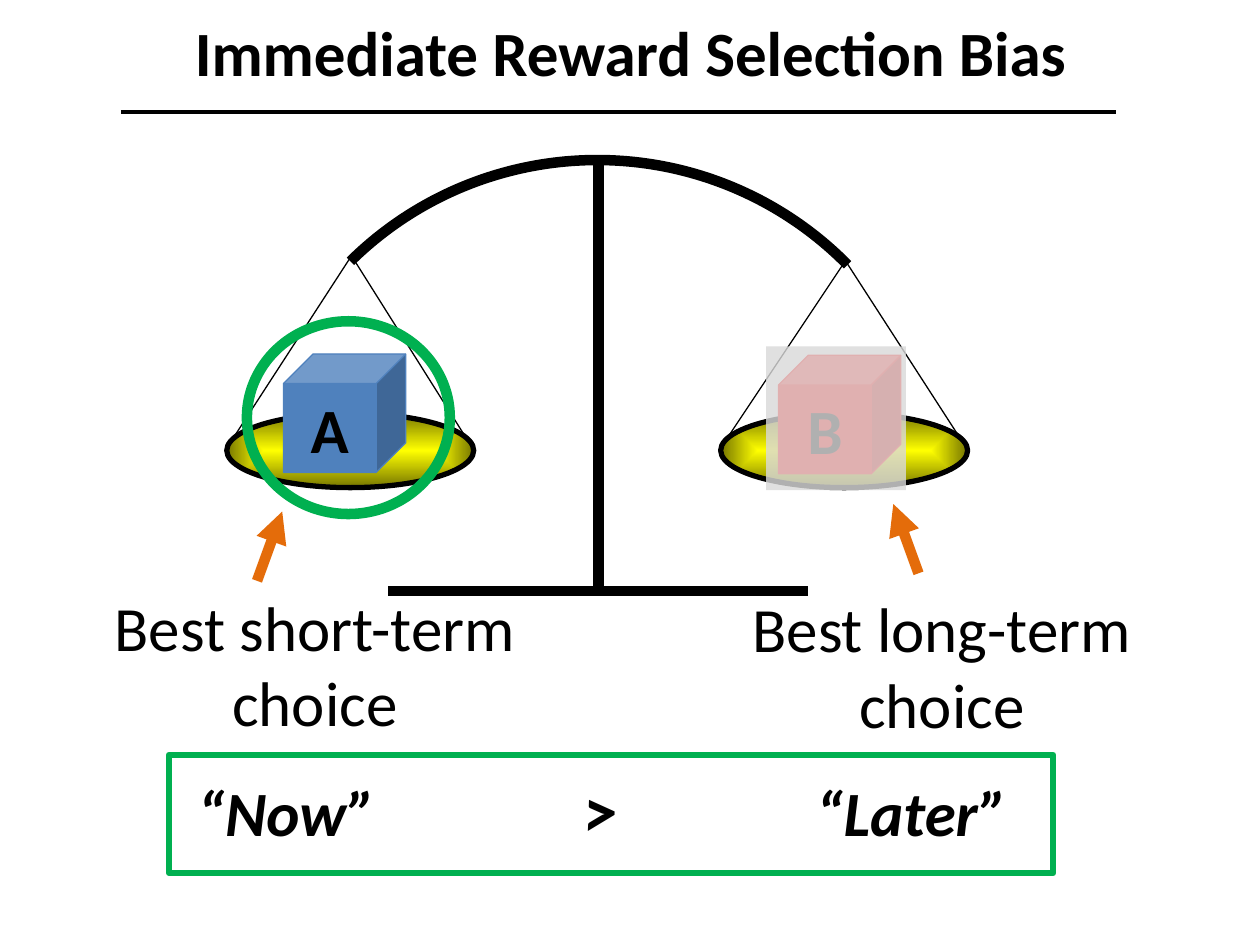
from dataclasses import dataclass

from lxml import etree
from pptx import Presentation
from pptx import util as u
from pptx.dml.color import RGBColor
from pptx.enum import shapes, text
from pptx.oxml import ns

COLUMNS, ROWS = 100, 75
CELL = u.Inches(10) // COLUMNS


@dataclass(frozen=True)
class Theme:
    font: str = "Calibri"
    ink: str = "000000"
    blue: str = "4F81BD"
    red: str = "FF0000"
    green: str = "00B050"
    orange: str = "E46C0A"
    veil: str = "D9D9D9"
    pan_inner: str = "FFFF00"
    pan_outer: str = "767600"
    size: int = 36
    sign_size: int = 40
    heavy: float = 6


THEME = Theme()


def grid(*cells):
    return [round(cell * CELL) for cell in cells]


def add_xml(parent, tag, **attributes):
    return etree.SubElement(parent, ns.qn(tag), **attributes)


def set_line(line, color, width):
    line.color.rgb = RGBColor.from_string(color)
    line.width = u.Pt(width)


def add_line(parts, start, end, width, color=THEME.ink, arrow=False):
    line = parts.add_connector(
        shapes.MSO_CONNECTOR.STRAIGHT, *grid(*start), *grid(*end))
    set_line(line.line, color, width)
    if arrow:
        add_xml(line.line._get_or_add_ln(), "a:tailEnd", type="triangle")
    add_xml(line._element.spPr, "a:effectLst")


def add_figure(parts, kind, place, fill=None, line=None, width=0.75):
    figure = parts.add_shape(kind, *grid(*place))
    figure.shadow.inherit = False
    if fill:
        figure.fill.solid()
        figure.fill.fore_color.rgb = RGBColor.from_string(fill)
    else:
        figure.fill.background()
    if line:
        set_line(figure.line, line, width)
    else:
        figure.line.fill.background()
    return figure


def write(frame, lines, size=THEME.size, bold=False, italic=False,
          align=text.PP_ALIGN.CENTER):
    for index, words in enumerate(lines):
        para = frame.paragraphs[0] if index == 0 else frame.add_paragraph()
        para.text = words
        para.alignment = align
        font = para.font
        font.name, font.size = THEME.font, u.Pt(size)
        font.bold, font.italic = bold, italic
        font.color.rgb = RGBColor.from_string(THEME.ink)


def add_label(page, place, lines, wrap=True, **style):
    box = page.shapes.add_textbox(*grid(*place))
    box.text_frame.word_wrap = wrap
    write(box.text_frame, lines, **style)
    return box


def add_title(page, words):
    title = page.shapes.title
    title.left, title.top, title.width, title.height = grid(3.1, 0, 93.9, 8.2)
    title.text_frame.auto_size = text.MSO_AUTO_SIZE.NONE
    title.text_frame.vertical_anchor = text.MSO_ANCHOR.MIDDLE
    write(title.text_frame, [words], bold=True)
    add_line(page.shapes, (9.6, 8.9), (88.6, 8.9), 2.25)


def add_pan(parts, left, hook):
    pan = add_figure(parts, shapes.MSO_SHAPE.OVAL, (left, 32.8, 19.6, 5.9),
                     line=THEME.ink, width=3)
    pan.fill.gradient()
    for stop, color in zip(pan.fill.gradient_stops,
                           (THEME.pan_inner, THEME.pan_outer)):
        stop.color.rgb = RGBColor.from_string(color)
    gradient = pan._element.spPr.find(ns.qn("a:gradFill"))
    gradient.remove(gradient.find(ns.qn("a:lin")))
    center = add_xml(gradient, "a:path", path="shape")
    add_xml(center, "a:fillToRect", l="50000", t="50000", r="50000", b="50000")
    for edge in (left + 0.1, left + 19.4):
        add_line(parts, (edge, 35.4), hook, 0.75)


def add_scale(page):
    parts = page.shapes.add_group_shape().shapes
    add_line(parts, (47.5, 12.4), (47.5, 46.9), THEME.heavy)
    add_line(parts, (30.8, 46.9), (64.1, 46.9), THEME.heavy)
    beam = add_figure(parts, shapes.MSO_SHAPE.ARC, (19.5, 12.7, 55.8, 55.8),
                      line=THEME.ink, width=THEME.heavy)
    beam.rotation = 315.4
    add_pan(parts, 18, (27.9, 20.3))
    add_pan(parts, 57.2, (67.1, 20.7))


def add_cube(page, place, letter, color):
    cube = add_figure(page.shapes, shapes.MSO_SHAPE.CUBE, place, color, color)
    cube.text_frame.vertical_anchor = text.MSO_ANCHOR.MIDDLE
    write(cube.text_frame, [letter], bold=True)


def add_comparison(page):
    style = {"wrap": False, "bold": True, "italic": True,
             "align": text.PP_ALIGN.LEFT}
    add_label(page, (14.7, 60.9, 16.5, 7.1), ["“Now”"], **style)
    add_label(page, (63.8, 60.9, 17.3, 7.1), ["“Later”"], **style)
    sign = add_label(page, (45.3, 60.4, 4.8, 7.7), [">"],
                     size=THEME.sign_size, **style)
    sign.rotation = 355.1
    add_figure(page.shapes, shapes.MSO_SHAPE.RECTANGLE, (13.4, 59.9, 70.2, 9.4),
               line=THEME.green, width=3.25)


def add_veil(page):
    veil = add_figure(page.shapes, shapes.MSO_SHAPE.RECTANGLE,
                      (60.8, 27.5, 11.1, 11.4), THEME.veil)
    color = veil._element.spPr.find(ns.qn("a:solidFill"))[0]
    add_xml(color, "a:alpha", val="81000")


def main():
    deck = Presentation()
    deck.slide_width, deck.slide_height = COLUMNS * CELL, ROWS * CELL
    page = deck.slides.add_slide(deck.slide_layouts[5])
    add_scale(page)
    add_title(page, "Immediate Reward Selection Bias")
    add_cube(page, (22.5, 28.1, 9.7, 9.4), "A", THEME.blue)
    add_cube(page, (61.8, 28.2, 9.7, 9.4), "B", THEME.red)
    add_label(page, (49.5, 46.3, 50.5, 13), ["Best long-term", "choice"])
    add_label(page, (4.2, 46.2, 41.6, 13), ["Best short-term choice"])
    for start, end in (((20.4, 46.1), (22.4, 40.6)),
                       ((72.9, 45.5), (70.9, 40))):
        add_line(page.shapes, start, end, THEME.heavy, THEME.orange, arrow=True)
    add_figure(page.shapes, shapes.MSO_SHAPE.OVAL, (19.6, 25.5, 16.1, 15.3),
               line=THEME.green, width=THEME.heavy)
    add_comparison(page)
    add_veil(page)
    deck.save("out.pptx")


if __name__ == "__main__":
    main()
